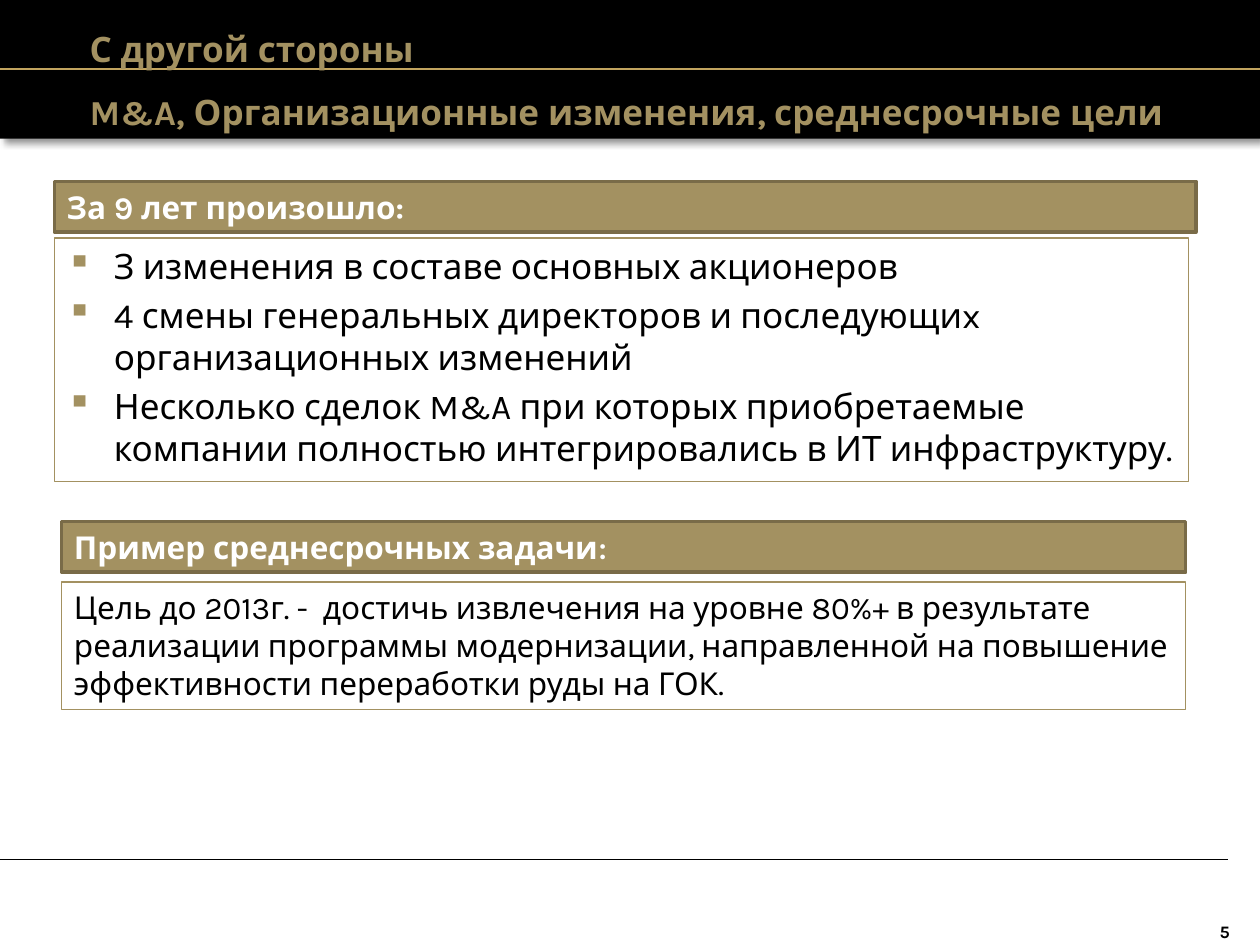
"""Build the slide on changes over nine years and mid-term goals."""
from lxml import etree
from pptx import Presentation
from pptx.dml.color import RGBColor
from pptx.enum.shapes import MSO_CONNECTOR, MSO_SHAPE
from pptx.enum.text import MSO_ANCHOR, MSO_AUTO_SIZE, PP_ALIGN
from pptx.oxml.ns import qn
from pptx.util import Pt

RECT = MSO_SHAPE.RECTANGLE
LINE = MSO_CONNECTOR.STRAIGHT
TOP, MID = MSO_ANCHOR.TOP, MSO_ANCHOR.MIDDLE
LEFT, RIGHT = PP_ALIGN.LEFT, PP_ALIGN.RIGHT
GROW = MSO_AUTO_SIZE.SHAPE_TO_FIT_TEXT

BLACK = RGBColor(0x00, 0x00, 0x00)
WHITE = RGBColor(0xFF, 0xFF, 0xFF)
GOLD = RGBColor(0xA3, 0x91, 0x61)
BROWN = RGBColor(0x79, 0x6B, 0x48)
SAND = RGBColor(0xC2, 0xA4, 0x5F)

WIDE, HIGH = 720, 540
BAND = 79.2
INDENT = 27

TITLE = "С другой стороны\vM&A, Организационные изменения, среднесрочные цели"
EVENTS = [
    "З изменения в составе основных акционеров",
    "4 смены генеральных директоров и последующиx организационных изменений",
    "Несколько сделок M&A при которых приобретаемые компании полностью "
    "интегрировались в ИТ инфраструктуру.",
]
GOAL = [
    "Цель до 2013г. -  достичь извлечения на уровне 80%+ в результате "
    "реализации программы модернизации, направленной на повышение "
    "эффективности переработки руды на ГОК."
]
HEADS = [
    (["За 9 лет произошло:"], (31, 103.6, 652.4, 29)),
    (["Пример среднесрочных задачи"], (35.2, 298, 642.4, 29)),
]
RULES = [(39.6, WIDE, SAND, 1), (491, 701.6, BLACK, 0.75)]

HEAD = {"size": Pt(18), "bold": True, "name": "Karla"}
LIST = {"size": Pt(20), "bold": False, "name": "Karla"}
NOTE = {"size": Pt(18), "bold": False, "name": "Karla"}
NAME = {"size": Pt(20), "bold": True, "name": "Karla"}
PAGE = {"size": Pt(10), "bold": True, "name": "Karla"}


def style(font, look, color):
    for key, value in look.items():
        setattr(font, key, value)
    font.color.rgb = color


def write(shape, texts, look, color, **frame):
    body = shape.text_frame
    for key, value in {"word_wrap": True, "vertical_anchor": TOP, **frame}.items():
        setattr(body, key, value)
    for i, text in enumerate(texts):
        para = body.add_paragraph() if i else body.paragraphs[0]
        para.text = text
        para.alignment = LEFT
        for run in para.runs:
            style(run.font, look, color)
    return body.paragraphs


def box(slide, place, fill, edge, width):
    shape = slide.shapes.add_shape(RECT, *map(Pt, place))
    shape.shadow.inherit = False
    if fill is None:
        shape.fill.background()
    else:
        shape.fill.solid()
        shape.fill.fore_color.rgb = fill
    if edge is None:
        shape.line.fill.background()
    else:
        shape.line.color.rgb = edge
        shape.line.width = Pt(width)
    return shape


def shade(shape):
    effects = shape._element.spPr.find(qn("a:effectLst"))
    outer = etree.SubElement(
        effects, qn("a:outerShdw"), blurRad=str(Pt(4)), dist=str(Pt(3)),
        dir="2700000", algn="tl", rotWithShape="0")
    tint = etree.SubElement(outer, qn("a:srgbClr"), val=str(BLACK))
    etree.SubElement(tint, qn("a:alpha"), val="40000")


def rule(slide, y, end, color, width):
    line = slide.shapes.add_connector(LINE, 0, Pt(y), Pt(end), Pt(y))
    line.line.color.rgb = color
    line.line.width = Pt(width)
    etree.SubElement(line._element.spPr, qn("a:effectLst"))


def bullet(para):
    props = para._p.get_or_add_pPr()
    props.set("marL", str(Pt(INDENT)))
    props.set("indent", str(-Pt(INDENT)))
    color = etree.SubElement(props, qn("a:buClr"))
    etree.SubElement(color, qn("a:srgbClr"), val=str(GOLD))
    etree.SubElement(props, qn("a:buChar"), char="▪")


def main():
    deck = Presentation()
    deck.slide_width, deck.slide_height = Pt(WIDE), Pt(HIGH)
    slide = deck.slides.add_slide(deck.slide_layouts[6])

    shade(box(slide, (0, 0, WIDE, BAND), BLACK, None, 0))
    for item in RULES:
        rule(slide, *item)

    title = slide.shapes.add_textbox(*map(Pt, (51.2, 0, 648, BAND)))
    paras = write(title, [TITLE], NAME, GOLD, vertical_anchor=MID,
                  margin_left=0, margin_right=0)
    paras[0].line_spacing = 1.5

    events = box(slide, (31, 136, 648, 139), None, GOLD, 0.75)
    for i, para in enumerate(write(events, EVENTS, LIST, BLACK)):
        para.space_before = Pt(4 if i else 0)
        bullet(para)

    page = slide.shapes.add_textbox(*map(Pt, (612, 525, 90.7, 15)))
    paras = write(page, ["5"], PAGE, BLACK, vertical_anchor=MID, margin_right=0)
    paras[0].alignment = RIGHT

    for texts, place in HEADS:
        head = box(slide, place, GOLD, BROWN, 2)
        paras = write(head, texts, HEAD, WHITE, auto_size=GROW)
    colon = paras[0].add_run()
    colon.text = ":"
    style(colon.font, {**HEAD, "name": "Calibri"}, WHITE)

    goal = box(slide, (35.2, 332.6, 642.4, 72.7), None, GOLD, 0.75)
    write(goal, GOAL, NOTE, BLACK, auto_size=GROW)

    deck.save("out.pptx")


if __name__ == "__main__":
    main()
